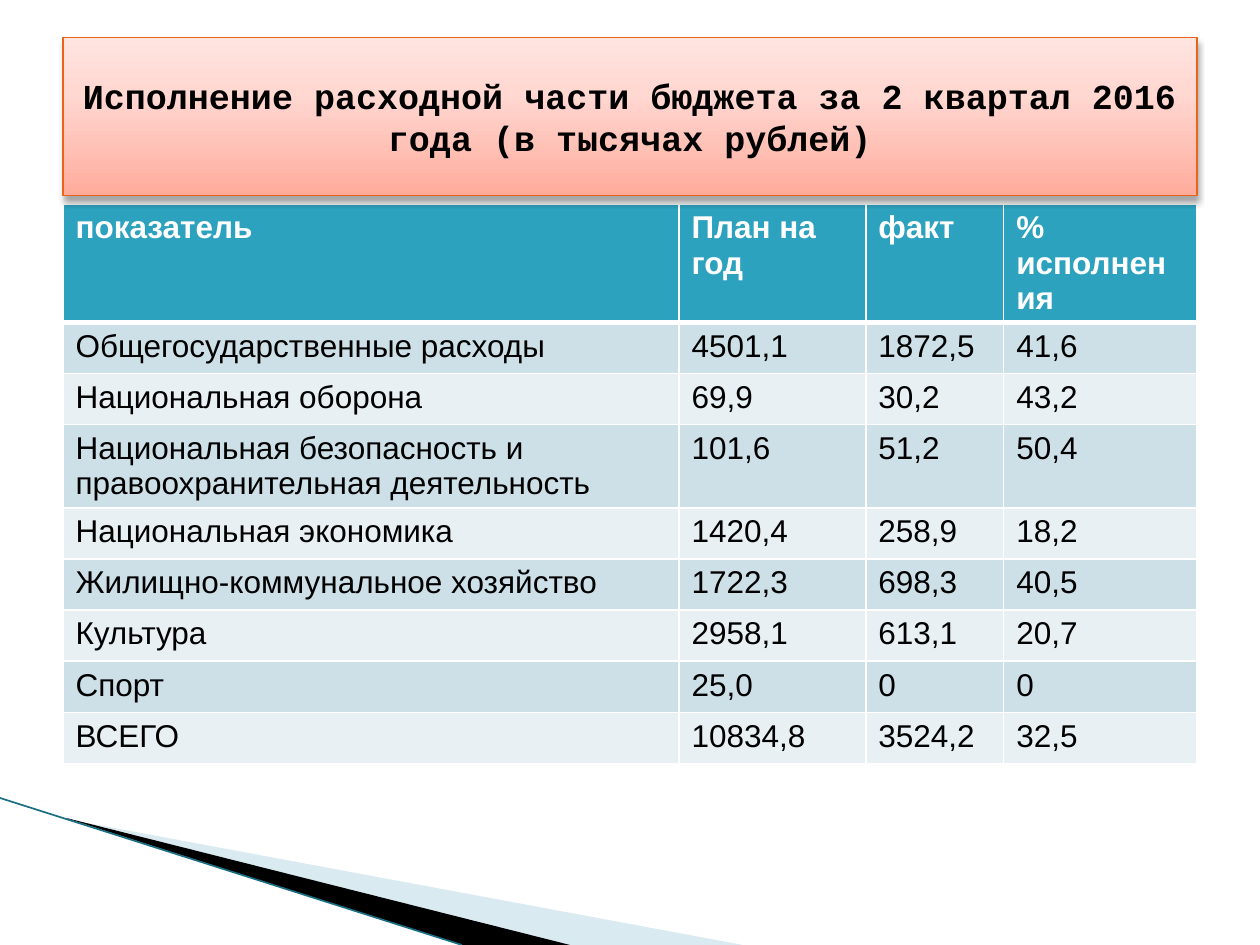
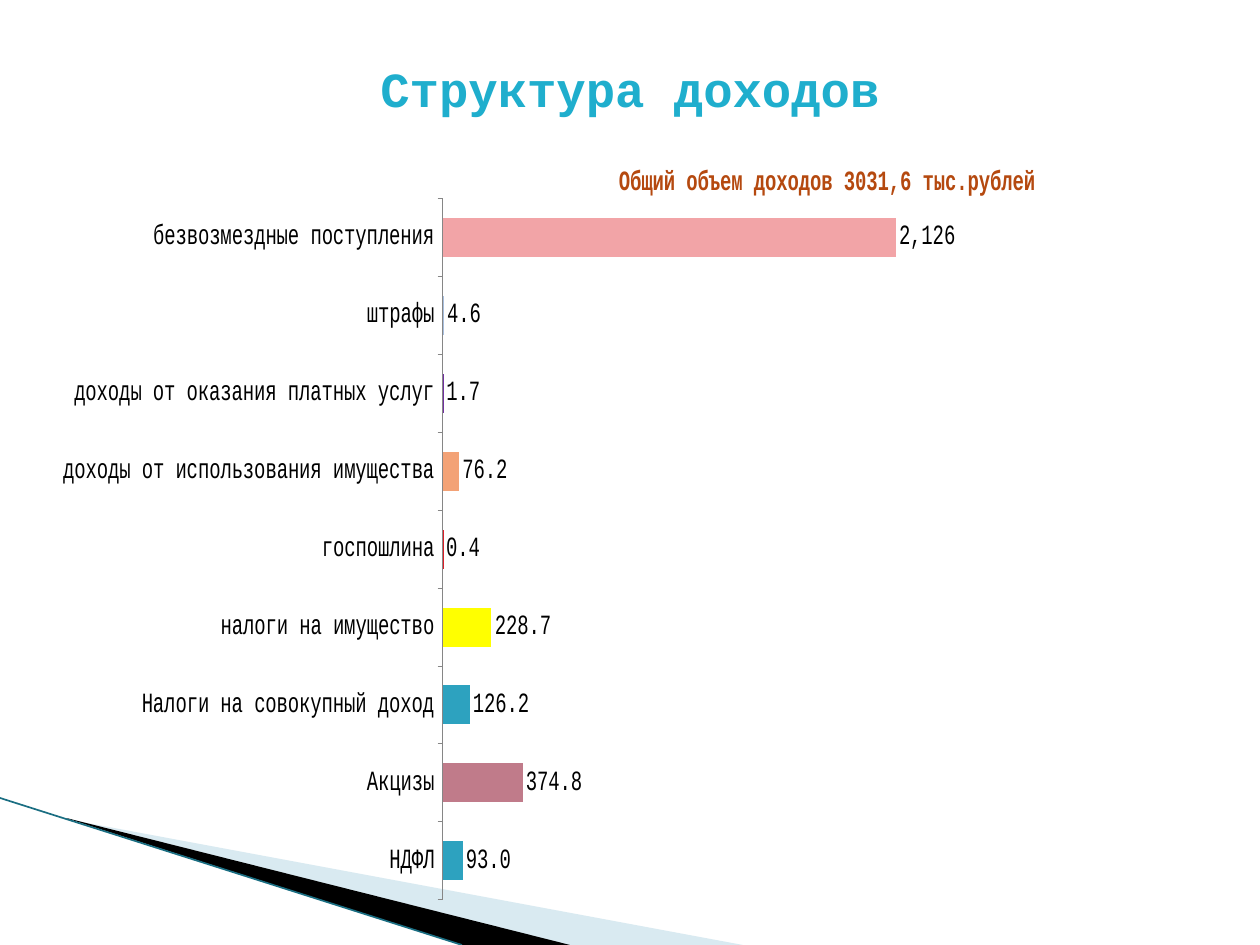
from lxml import etree
from pptx import Presentation
from pptx.chart.data import CategoryChartData
from pptx.dml.color import RGBColor
from pptx.enum.chart import XL_CHART_TYPE as ChartType, XL_LABEL_POSITION as LabelPos
from pptx.enum.chart import XL_TICK_LABEL_POSITION as TickLabels, XL_TICK_MARK as Tick
from pptx.enum.shapes import MSO_CONNECTOR as Connector
from pptx.enum.text import MSO_ANCHOR as Anchor, MSO_AUTO_SIZE as AutoSize, PP_ALIGN as Align
from pptx.oxml import parse_xml
from pptx.oxml.ns import nsdecls, qn
from pptx.util import Pt

BLACK = RGBColor(0x00, 0x00, 0x00)
WHITE = RGBColor(0xFF, 0xFF, 0xFF)
TEAL = RGBColor(0x2D, 0xA2, 0xBF)
CYAN = RGBColor(0x1F, 0xAE, 0xCD)
DARK_TEAL = RGBColor(0x1A, 0x6E, 0x82)
PALE_BLUE = RGBColor(0xA0, 0xCB, 0xDC)
BAND_DARK = RGBColor(0xCD, 0xE0, 0xE8)
BAND_LIGHT = RGBColor(0xE8, 0xF0, 0xF4)
ORANGE = RGBColor(0xEB, 0x64, 0x1B)
BROWN = RGBColor(0xB5, 0x49, 0x0F)
GREY = RGBColor(0x86, 0x86, 0x86)
YELLOW = RGBColor(0xFF, 0xFF, 0x00)
RED = RGBColor(0xDA, 0x1F, 0x28)
PEACH = RGBColor(0xF3, 0xA2, 0x76)
PURPLE = RGBColor(0x70, 0x30, 0xA0)
STEEL = RGBColor(0xA8, 0xBF, 0xDF)
PINK = RGBColor(0xF2, 0xA4, 0xA7)
MAUVE = RGBColor(0xC0, 0x7B, 0x8A)
BANNER_STOPS = ((0, RGBColor(0xFF, 0xAC, 0x9C)), (65, RGBColor(0xFF, 0xD8, 0xD2)),
                (100, RGBColor(0xFF, 0xE4, 0xDF)))

BODY_FONT = "Arial"
TITLE_FONT = "Courier New"
LEFT, TOP, WIDTH = 36, 21.6, 648

EXPENSES = [
    ("показатель", "План на год", "факт", "% исполнения"),
    ("Общегосударственные расходы", "4501,1", "1872,5", "41,6"),
    ("Национальная оборона", "69,9", "30,2", "43,2"),
    ("Национальная безопасность и правоохранительная деятельность", "101,6", "51,2", "50,4"),
    ("Национальная экономика", "1420,4", "258,9", "18,2"),
    ("Жилищно-коммунальное хозяйство", "1722,3", "698,3", "40,5"),
    ("Культура", "2958,1", "613,1", "20,7"),
    ("Спорт", "25,0", "0", "0"),
    ("ВСЕГО", "10834,8", "3524,2", "32,5"),
]
INCOME = [
    ("НДФЛ", 93, TEAL),
    ("Акцизы", 374.8, MAUVE),
    ("Налоги на совокупный доход", 126.2, TEAL),
    ("налоги на имущество", 228.7, YELLOW),
    ("госпошлина", 0.4, RED),
    ("доходы от использования имущества", 76.2, PEACH),
    ("доходы от оказания платных услуг", 1.7, PURPLE),
    ("штрафы", 4.6, STEEL),
    ("безвозмездные поступления", 2126, PINK),
]


def style_font(font, name=BODY_FONT, size=18, color=BLACK, bold=False):
    font.name, font.size, font.bold = name, Pt(size), bold
    font.color.rgb = color


def write(tf, text, align=Align.LEFT, **style):
    p = tf.paragraphs[0]
    p.alignment = align
    r = p.add_run()
    r.text = text
    style_font(r.font, **style)


def set_borders(cell, top, bottom):
    tc_pr = cell._tc.get_or_add_tcPr()
    for i, (side, width) in enumerate(zip("LRTB", (1, 1, top, bottom))):
        tc_pr.insert(i, parse_xml(
            f'<a:ln{side} {nsdecls("a")} w="{Pt(width)}"><a:solidFill>'
            f'<a:srgbClr val="{WHITE}"/></a:solidFill></a:ln{side}>'))


class Deck:
    """Hold the shared style and the slide being built."""

    def __init__(self):
        self.prs = Presentation()
        self.prs.slide_width, self.prs.slide_height = Pt(720), Pt(540)
        self.s = None

    def slide(self):
        self.s = self.prs.slides.add_slide(self.prs.slide_layouts[5])
        self.wedge([(40, 468.5), (424.5, 540), (325, 540), (40, 468)], PALE_BLUE, 40)
        self.wedge([(38, 467.5), (325.7, 540), (264, 540), (39, 468)], BLACK)
        self.line((0, 456), (264, 540), DARK_TEAL, 0.95)

    def wedge(self, points, color, opacity=100):
        start, *rest = [(Pt(x), Pt(y)) for x, y in points]
        builder = self.s.shapes.build_freeform(*start)
        builder.add_line_segments(rest)
        sp = builder.convert_to_shape()
        sp.shadow.inherit = False
        sp.line.fill.background()
        sp.fill.solid()
        sp.fill.fore_color.rgb = color
        if opacity < 100:
            clr = sp.element.spPr.find(".//" + qn("a:srgbClr"))
            etree.SubElement(clr, qn("a:alpha"), val=str(opacity * 1000))

    def line(self, start, end, color, width):
        points = [Pt(v) for v in start + end]
        ln = self.s.shapes.add_connector(Connector.STRAIGHT, *points)
        ln.line.color.rgb = color
        ln.line.width = Pt(width)
        etree.SubElement(ln.element.spPr, qn("a:effectLst"))

    def title(self, text, height, size, color):
        sp = self.s.shapes.title
        sp.left, sp.top, sp.width, sp.height = Pt(LEFT), Pt(TOP), Pt(WIDTH), Pt(height)
        tf = sp.text_frame
        tf.word_wrap = True
        tf.auto_size = AutoSize.NONE
        tf.vertical_anchor = Anchor.MIDDLE
        write(tf, text, align=Align.CENTER, name=TITLE_FONT, size=size, color=color, bold=True)
        sp.element.getparent().append(sp.element)
        return sp

    def banner(self, text, height, size, color):
        sp = self.title(text, height, size, color)
        stops = "".join(f'<a:gs pos="{pos * 1000}"><a:srgbClr val="{rgb}"/></a:gs>'
                        for pos, rgb in BANNER_STOPS)
        sp_pr = sp.element.spPr
        sp_pr.append(parse_xml(f'<a:prstGeom {nsdecls("a")} prst="rect"><a:avLst/></a:prstGeom>'))
        sp_pr.append(parse_xml(f'<a:gradFill {nsdecls("a")} rotWithShape="1"><a:gsLst>{stops}'
                               '</a:gsLst><a:lin ang="16200000" scaled="0"/></a:gradFill>'))
        sp.line.color.rgb = ORANGE
        sp.line.width = Pt(0.75)
        sp_pr.append(parse_xml(
            f'<a:effectLst {nsdecls("a")}><a:outerShdw blurRad="{Pt(4)}" dist="{Pt(3)}" '
            f'dir="5400000" rotWithShape="0"><a:srgbClr val="{BLACK}"><a:alpha val="35000"/>'
            '</a:srgbClr></a:outerShdw></a:effectLst>'))

    def table(self, rows, top, widths, row_height):
        frame = self.s.shapes.add_table(len(rows), len(widths), Pt(LEFT), Pt(top),
                                        Pt(WIDTH), Pt(row_height * len(rows)))
        table = frame.table
        for column, width in zip(table.columns, widths):
            column.width = Pt(width)
        for i, row in enumerate(rows):
            table.rows[i].height = Pt(row_height)
            header = i == 0
            fill = TEAL if header else BAND_DARK if i % 2 else BAND_LIGHT
            for j, text in enumerate(row):
                cell = table.cell(i, j)
                cell.fill.solid()
                cell.fill.fore_color.rgb = fill
                set_borders(cell, top=3 if i == 1 else 1, bottom=3 if header else 1)
                write(cell.text_frame, text, color=WHITE if header else BLACK, bold=header)

    def bar_chart(self, title, items, box, plot, size):
        data = CategoryChartData(number_format="#,##0.0")
        data.categories = [name for name, _, _ in items]
        data.add_series("Series 1", [value for _, value, _ in items])
        chart = self.s.shapes.add_chart(ChartType.BAR_CLUSTERED, *map(Pt, box), data).chart
        style_font(chart.font, name=TITLE_FONT, size=size)
        chart.has_legend = False
        chart.has_title = True
        write(chart.chart_title.text_frame, title, align=Align.CENTER,
              name=TITLE_FONT, size=size, color=BROWN, bold=True)

        names, values = chart.category_axis, chart.value_axis
        names.major_tick_mark = Tick.OUTSIDE
        names.tick_label_position = TickLabels.NEXT_TO_AXIS
        names.format.line.color.rgb = GREY
        names.has_major_gridlines = values.has_major_gridlines = False
        values.visible = False
        values.minimum_scale, values.major_unit = 0, 100

        bars = chart.plots[0]
        bars.gap_width = 100
        bars.vary_by_categories = False
        series = bars.series[0]
        series.format.fill.solid()
        series.format.fill.fore_color.rgb = TEAL
        labels = series.data_labels
        labels.show_value = True
        labels.position = LabelPos.OUTSIDE_END
        labels.number_format = "#,##0.0"
        labels.number_format_is_linked = False
        style_font(labels.font, name=TITLE_FONT, size=size)
        for i, (_, value, color) in enumerate(items):
            point = series.points[i]
            if color != TEAL:
                point.format.fill.solid()
                point.format.fill.fore_color.rgb = color
            if value >= 1000:
                self.whole_label(series, point, size)
        self.place_plot(chart, [v / box[2 + i % 2] for i, v in enumerate(plot)])

    def whole_label(self, series, point, size):
        label = point.data_label
        style_font(label.font, name=TITLE_FONT, size=size)
        label.position = LabelPos.OUTSIDE_END
        d_lbl = series.data_labels._element.find(qn("c:dLbl"))
        d_lbl.insert(1, parse_xml(
            f'<c:numFmt {nsdecls("c")} formatCode="#,##0" sourceLinked="0"/>'))

    def place_plot(self, chart, plot):
        area = chart.element.find(".//" + qn("c:plotArea"))
        for old in area.findall(qn("c:layout")):
            area.remove(old)
        layout = etree.Element(qn("c:layout"))
        manual = etree.SubElement(layout, qn("c:manualLayout"))
        settings = [("layoutTarget", "inner"), ("xMode", "edge"), ("yMode", "edge")]
        for tag, value in settings + list(zip("xywh", plot)):
            etree.SubElement(manual, qn(f"c:{tag}"), val=str(value))
        area.insert(0, layout)


def main():
    deck = Deck()

    deck.slide()
    deck.table(EXPENSES, top=116.6, widths=(352, 106.8, 78.8, 110.4), row_height=29.2)
    deck.banner("Исполнение расходной части бюджета за 2 квартал 2016 года (в тысячах рублей)",
                height=90, size=20, color=BLACK)

    deck.slide()
    deck.bar_chart("Общий объем доходов 3031,6 тыс.рублей", INCOME,
                   box=(LEFT, 78.5, 661.7, 461.5), plot=(8, 35.1, 411.6, 400.6), size=15.9)
    deck.title("Структура доходов", height=57, size=28, color=CYAN)

    deck.prs.save("out.pptx")


if __name__ == "__main__":
    main()
